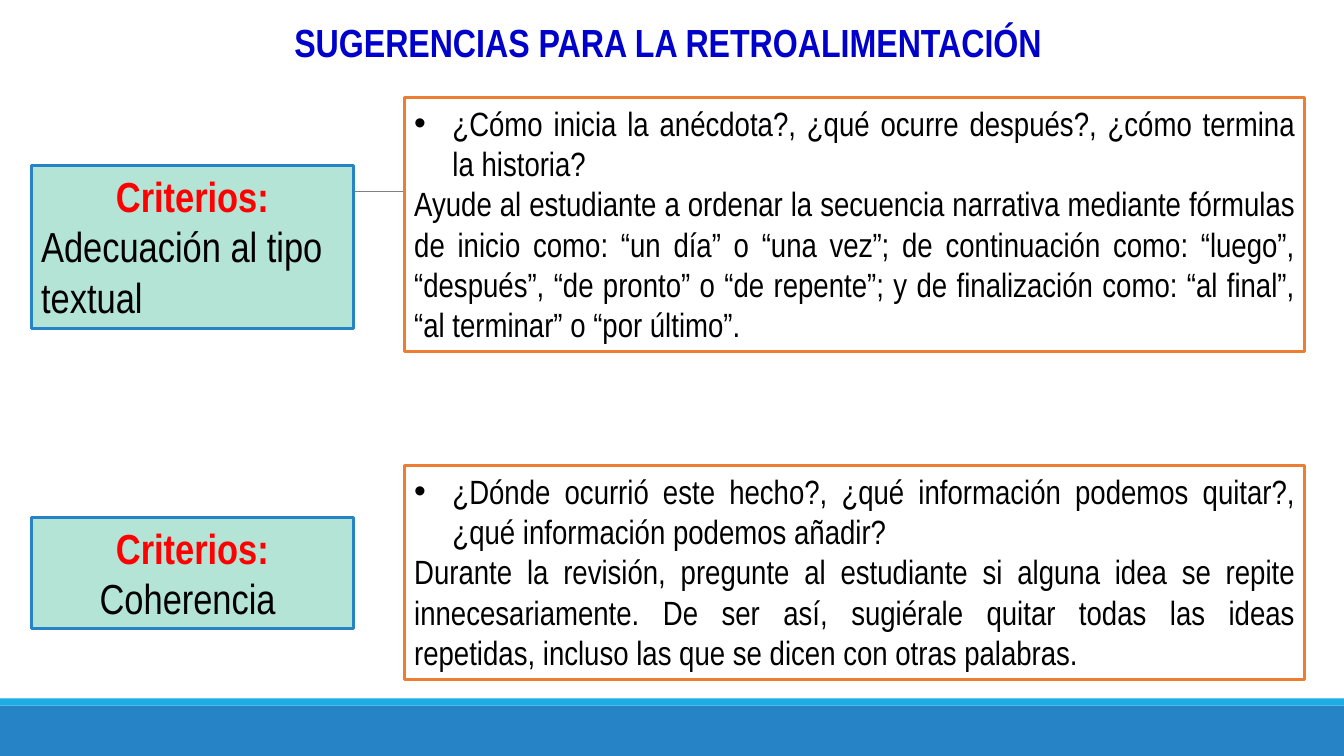
"""Build the slide with feedback suggestions for two writing criteria."""
from lxml import etree
from pptx import Presentation
from pptx.dml.color import RGBColor
from pptx.enum.shapes import MSO_CONNECTOR, MSO_SHAPE
from pptx.enum.text import MSO_ANCHOR, MSO_AUTO_SIZE, PP_ALIGN
from pptx.oxml.ns import qn
from pptx.util import Inches, Pt

BLUE = RGBColor(0x26, 0x83, 0xC6)
CYAN = RGBColor(0x1C, 0xAD, 0xE4)
MINT = RGBColor(0xB3, 0xE4, 0xD6)
ORANGE = RGBColor(0xED, 0x7D, 0x31)
NAVY = RGBColor(0x00, 0x00, 0xCC)
RED = RGBColor(0xFF, 0x00, 0x00)
GRAY = RGBColor(0x80, 0x80, 0x80)
BLACK = RGBColor(0x00, 0x00, 0x00)
WHITE = RGBColor(0xFF, 0xFF, 0xFF)

deck = Presentation()
deck.slide_width, deck.slide_height = Inches(13.33), Inches(7.5)
slide = deck.slides.add_slide(deck.slide_layouts[6])
shapes = slide.shapes


def add_box(left, top, width, height, fill=None, line=None):
    box = shapes.add_shape(MSO_SHAPE.RECTANGLE, Inches(left), Inches(top),
                           Inches(width), Inches(height))
    box.shadow.inherit = False
    if fill is None:
        box.fill.background()
    else:
        box.fill.solid()
        box.fill.fore_color.rgb = fill
    if line is None:
        box.line.fill.background()
    else:
        box.line.color.rgb = line
        box.line.width = Pt(2.25)
    frame = box.text_frame
    frame.word_wrap = True
    frame.vertical_anchor = MSO_ANCHOR.TOP
    frame.auto_size = MSO_AUTO_SIZE.SHAPE_TO_FIT_TEXT
    return frame


def add_text(frame, text, size=24, color=BLACK, bold=False,
             align=PP_ALIGN.JUSTIFY, bullet=False):
    para = frame.paragraphs[0]
    if para.runs:
        para = frame.add_paragraph()
    para.alignment = align
    run = para.add_run()
    run.text = text
    run.font.name = "Arial Narrow"
    run.font.size = Pt(size)
    run.font.bold = bold
    run.font.color.rgb = color
    if bullet:
        props = para._p.get_or_add_pPr()
        props.set("marL", str(Inches(0.38)))
        props.set("indent", str(Inches(-0.38)))
        etree.SubElement(props, qn("a:buFont")).set("typeface", "Arial")
        etree.SubElement(props, qn("a:buChar")).set("char", "•")


for top, height, color in [(7, 0.5, BLUE), (6.93, 0.07, CYAN)]:
    add_box(0, top, 13.33, height, fill=color)

rule = shapes.add_connector(MSO_CONNECTOR.STRAIGHT, Inches(1.31), Inches(1.9),
                            Inches(12.21), Inches(1.9))
rule.line.color.rgb = GRAY
rule.line.width = Pt(0.5)
etree.SubElement(rule._element.spPr, qn("a:effectLst"))

title = add_box(0.53, 0.13, 12.19, 0.57)
add_text(title, "SUGERENCIAS PARA LA RETROALIMENTACIÓN", size=28, color=NAVY,
         bold=True, align=PP_ALIGN.CENTER)

criteria = [
    (1.64, 1.62, "Adecuación al tipo textual", PP_ALIGN.LEFT),
    (5.13, 1.11, "Coherencia ", PP_ALIGN.CENTER),
]
for top, height, name, align in criteria:
    label = add_box(0.31, top, 3.2, height, fill=MINT, line=BLUE)
    add_text(label, "Criterios:", size=30, color=RED, bold=True,
             align=PP_ALIGN.CENTER)
    add_text(label, name, size=30, align=align)

advice = [
    (0.97, 2.52, WHITE,
     "¿Cómo inicia la anécdota?, ¿qué ocurre después?, ¿cómo termina la "
     "historia?",
     "Ayude al estudiante a ordenar la secuencia narrativa mediante fórmulas "
     "de inicio como: “un día” o “una vez”; de continuación como: “luego”, "
     "“después”, “de pronto” o “de repente”; y de finalización como: “al "
     "final”, “al terminar” o “por último”."),
    (4.62, 2.12, None,
     "¿Dónde ocurrió este hecho?, ¿qué información podemos quitar?, ¿qué "
     "información podemos añadir?",
     "Durante la revisión, pregunte al estudiante si alguna idea se repite "
     "innecesariamente. De ser así, sugiérale quitar todas las ideas "
     "repetidas, incluso las que se dicen con otras palabras."),
]
for top, height, fill, question, tip in advice:
    panel = add_box(4.01, top, 8.93, height, fill=fill, line=ORANGE)
    add_text(panel, question, bullet=True)
    add_text(panel, tip)

deck.save("out.pptx")
